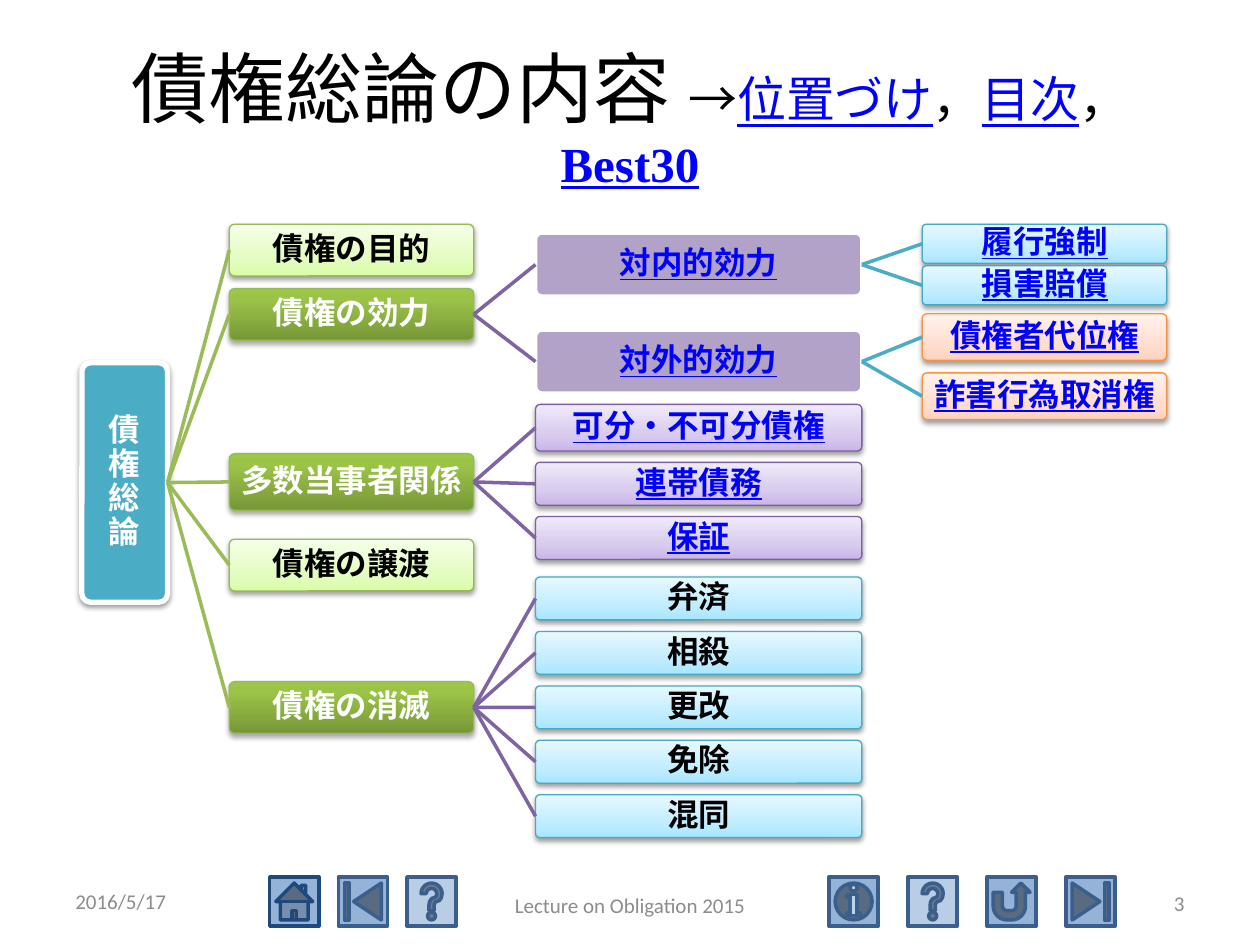
from collections import namedtuple

from lxml import etree
from pptx import Presentation, util as u
from pptx.dml.color import RGBColor
from pptx.enum import shapes, text
from pptx.oxml import ns

# Grid: 100 columns by 75 rows, each a tenth of an inch
UNIT = u.Inches(0.1)
COLUMNS, ROWS = 100, 75

BLACK = RGBColor(0x00, 0x00, 0x00)
WHITE = RGBColor(0xFF, 0xFF, 0xFF)
GRAY = RGBColor(0x8C, 0x8C, 0x8C)
LINK = RGBColor(0x00, 0x00, 0xFF)
TEAL = RGBColor(0x4B, 0xAC, 0xC6)
GREEN = RGBColor(0x9B, 0xBB, 0x59)
PURPLE = RGBColor(0x80, 0x64, 0xA2)
LILAC = RGBColor(0xB3, 0xA2, 0xC7)
GREEN_EDGE = RGBColor(0x98, 0xB9, 0x55)
SKY_EDGE = RGBColor(0x46, 0xAA, 0xC5)
PEACH_EDGE = RGBColor(0xF6, 0x92, 0x40)
VIOLET_EDGE = RGBColor(0x7D, 0x60, 0xA0)
BUTTON = RGBColor(0x95, 0xB3, 0xD7)
BUTTON_PALE = RGBColor(0xB9, 0xCD, 0xE5)
BUTTON_EDGE = RGBColor(0x3A, 0x5F, 0x8C)
HOME_EDGE = RGBColor(0x1F, 0x49, 0x7D)


def gradient(middle, *colors):
    """Gradient stops, from the bottom edge to the top."""
    return [(position, RGBColor.from_string(color))
            for position, color in zip((0, middle, 100), colors)]


MINT_FILL = gradient(35, "DAFDA7", "E4FCC2", "F5FFE7")
LEAF_FILL = gradient(80, "779737", "9BC348", "9DC746")
SKY_FILL = gradient(35, "A7E6FF", "C1EDFF", "E7F8FF")
PEACH_FILL = gradient(35, "FFD2BD", "FFDED0", "FFF2ED")
VIOLET_FILL = gradient(35, "C9B5E8", "D8CBEE", "F0EAF9")

# shadow is (distance in points, opacity in percent)
Style = namedtuple("Style", "fill edge edge_width color shadow")
SOFT, FIRM = (1.6, 38), (1.8, 35)
ROOT = Style(TEAL, WHITE, 3, WHITE, SOFT)
MINT = Style(MINT_FILL, GREEN_EDGE, 0.75, BLACK, SOFT)
LEAF = Style(LEAF_FILL, GREEN_EDGE, 0.75, WHITE, FIRM)
FLAT = Style(LILAC, WHITE, 2, LINK, None)
SKY = Style(SKY_FILL, SKY_EDGE, 0.75, BLACK, SOFT)
SKY_LINK = SKY._replace(color=LINK)
PEACH = Style(PEACH_FILL, PEACH_EDGE, 0.75, LINK, SOFT)
VIOLET = Style(VIOLET_FILL, VIOLET_EDGE, 0.75, LINK, SOFT)

# Tree levels: left and width in columns, colour of the branch leading there
Level = namedtuple("Level", "left width branch")
LEVELS = [Level(0, 6.8, None), Level(11.7, 19.4, GREEN),
          Level(36, 25.9, PURPLE), Level(66.7, 19.4, TEAL)]

# Nodes: top and height in rows below the top of the tree
Node = namedtuple("Node", "label style top height children", defaults=[()])
ENDINGS = ["弁済", "相殺", "更改", "免除", "混同"]
TREE = Node("債\v権\v総\v論", ROOT, 11, 19, [
    Node("債権の目的", MINT, 0, 4.1),
    Node("債権の効力", LEAF, 5.1, 4.1, [
        Node("対内的効力", FLAT, 0.7, 5, [
            Node("履行強制", SKY_LINK, 0, 3.1),
            Node("損害賠償", SKY_LINK, 3.3, 3.1)]),
        Node("対外的効力", FLAT, 8.4, 5, [
            Node("債権者代位権", PEACH, 7.1, 3.7),
            Node("詐害行為取消権", PEACH, 11.8, 3.7)])]),
    Node("多数当事者関係", LEAF, 18.2, 4.5, [
        Node("可分・不可分債権", VIOLET, 14.3, 3.7),
        Node("連帯債務", VIOLET, 18.9, 3.4),
        Node("保証", VIOLET, 23.2, 3.4)]),
    Node("債権の譲渡", MINT, 25, 4.1),
    Node("債権の消滅", LEAF, 36.3, 4.1, [
        Node(label, SKY, 28 + 4.32 * row, 3.4)
        for row, label in enumerate(ENDINGS)])])


def grid(*lengths):
    return [round(length * UNIT) for length in lengths]


def add_xml(parent, tag, **attributes):
    return etree.SubElement(parent, ns.qn(tag), attributes)


def write_text(shape, content, size=18, font="Calibri", color=BLACK, bold=None,
               underline=None, align="CENTER", margin=None, spacing=None):
    """Write a string, or a list of (string, format overrides), in a shape."""
    frame = shape.text_frame
    frame.word_wrap = True
    frame.vertical_anchor = text.MSO_ANCHOR.MIDDLE
    if margin is not None:
        frame.margin_left = frame.margin_right = margin
        frame.margin_top = frame.margin_bottom = margin
    paragraph = frame.paragraphs[0]
    paragraph.alignment = getattr(text.PP_ALIGN, align)
    paragraph.line_spacing = spacing
    base = dict(size=size, name=font, color=color, bold=bold, underline=underline)
    if isinstance(content, str):
        paragraph.text = content
        formats = [{}] * len(paragraph.runs)
    else:
        for words, _ in content:
            paragraph.add_run().text = words
        formats = [overrides for _, overrides in content]
    for run, overrides in zip(paragraph.runs, formats):
        values = {**base, **overrides}
        run.font.size = u.Pt(values["size"])
        run.font.name = values["name"]
        run.font.bold = values["bold"]
        run.font.underline = values["underline"]
        run.font.color.rgb = values["color"]


def paint(shape, fill, edge, width, shadow=None):
    shape.shadow.inherit = False
    if isinstance(fill, RGBColor):
        shape.fill.solid()
        shape.fill.fore_color.rgb = fill
    else:
        shape.fill.gradient()
        shape.fill.gradient_angle = 90
        stops = shape.element.spPr.find(".//" + ns.qn("a:gsLst"))
        for stop in list(stops):
            stops.remove(stop)
        for position, color in fill:
            stop = add_xml(stops, "a:gs", pos=str(position * 1000))
            add_xml(stop, "a:srgbClr", val=str(color))
    shape.line.color.rgb = edge
    shape.line.width = u.Pt(width)
    if shadow:
        distance, opacity = shadow
        effects = shape.element.spPr.find(ns.qn("a:effectLst"))
        outer = add_xml(effects, "a:outerShdw", blurRad=str(u.Pt(3.1)),
                        dist=str(u.Pt(distance)), dir="5400000", rotWithShape="0")
        add_xml(add_xml(outer, "a:srgbClr", val=str(BLACK)),
                "a:alpha", val=str(opacity * 1000))


def add_title(slide, left, top, width, height):
    box = slide.shapes.add_textbox(*grid(left, top, width, height))
    small = dict(size=28)
    link = dict(size=28, color=LINK, underline=True)
    write_text(box, [("債権総論の内容 ", {}), ("→", small), ("位置づけ", link),
                     ("，", small), ("目次", link), ("， ", small),
                     ("Best30", {**link, "name": "Times New Roman", "bold": True})],
               size=44)


def add_tree(slide, left, top, node, depth=0, parent=None):
    """Draw a node, the branch from its parent, and then its children."""
    level, style = LEVELS[depth], node.style
    shape = slide.shapes.add_shape(
        shapes.MSO_SHAPE.ROUNDED_RECTANGLE,
        *grid(left + level.left, top + node.top, level.width, node.height))
    shape.adjustments[0] = 0.1
    paint(shape, style.fill, style.edge, style.edge_width, style.shadow)
    write_text(shape, node.label, color=style.color, bold=True, spacing=0.9,
               underline=style.color == LINK, margin=u.Inches(0.02))
    if parent is not None:
        branch = slide.shapes.add_connector(shapes.MSO_CONNECTOR.STRAIGHT, 0, 0, 0, 0)
        branch.begin_connect(parent, 3)
        branch.end_connect(shape, 1)
        branch.line.color.rgb = level.branch
        branch.line.width = u.Pt(2)
        add_xml(branch.element.spPr, "a:effectLst")
    for child in node.children:
        add_tree(slide, left, top, child, depth + 1, shape)


def add_buttons(slide, left, top, pitch, buttons):
    for index, (name, fill, edge) in enumerate(buttons):
        kind = getattr(shapes.MSO_SHAPE, "ACTION_BUTTON_" + name)
        button = slide.shapes.add_shape(kind, *grid(left + index * pitch, top, 3.9, 3.9))
        paint(button, fill, edge, 2)


def add_footer(slide, left, top, width, height):
    side, middle = 0.26 * width, 0.352 * width
    for content, x, y, share, align in [
            ("2016/5/17", 0, 0, side, "LEFT"),
            ("Lecture on Obligation 2015", (width - middle) / 2, 0.3, middle, "CENTER"),
            ("3", width - side, 0.2, side, "RIGHT")]:
        box = slide.shapes.add_textbox(*grid(left + x, top + y, share, height))
        write_text(box, content, size=12, color=GRAY, align=align)


def main():
    presentation = Presentation()
    presentation.slide_width, presentation.slide_height = grid(COLUMNS, ROWS)
    slide = presentation.slides.add_slide(presentation.slide_layouts[6])

    # Navigation buttons, left and right of the footer text
    add_buttons(slide, 21.4, 69.6, 5.45, [("HOME", BUTTON, HOME_EDGE),
                                          ("BEGINNING", BUTTON, BUTTON_EDGE),
                                          ("HELP", BUTTON_PALE, BUTTON_EDGE)])
    add_buttons(slide, 65.8, 69.6, 6.27, [("INFORMATION", BUTTON, BUTTON_EDGE),
                                          ("HELP", BUTTON_PALE, BUTTON_EDGE),
                                          ("RETURN", BUTTON, BUTTON_EDGE),
                                          ("END", BUTTON, BUTTON_EDGE)])
    add_title(slide, 5, 3, 90, 12.5)
    add_footer(slide, 5, 69.5, 90, 4)
    add_tree(slide, 6.5, 17.8, TREE)
    presentation.save("out.pptx")


if __name__ == "__main__":
    main()
